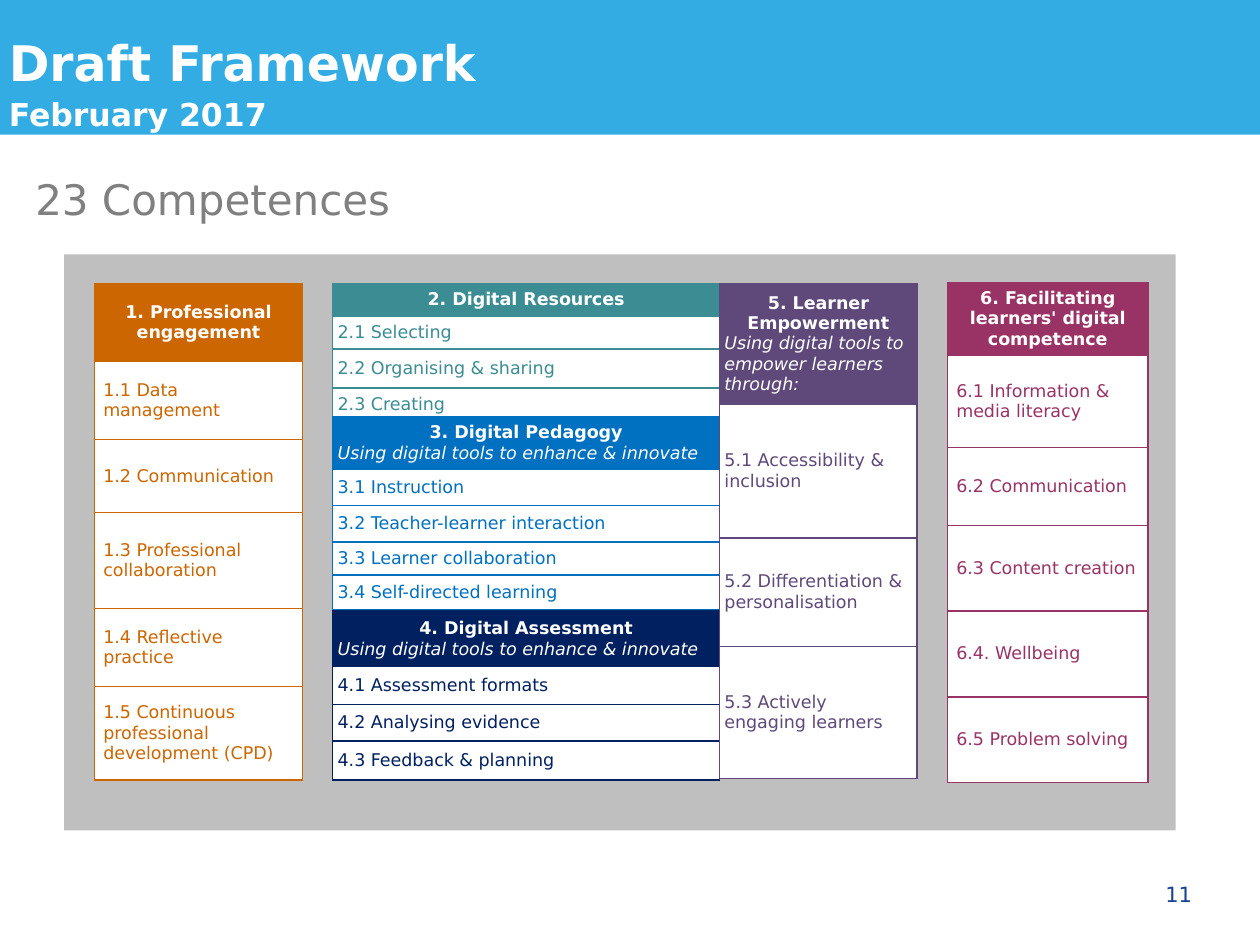
import pptx
import pptx.util
import pptx.dml.color
import pptx.enum.shapes
import pptx.enum.text
import pptx.oxml.ns
import lxml.etree

Inches = pptx.util.Inches
Pt = pptx.util.Pt
Align = pptx.enum.text.PP_ALIGN
Anchor = pptx.enum.text.MSO_ANCHOR

COLORS = {
    "banner": "33ACE3",
    "panel": "BFBFBF",
    "white": "FFFFFF",
    "heading": "808080",
    "page": "164194",
    "resources": "3C8C93",
    "pedagogy": "0070C0",
    "assessment": "002060",
    "facilitating": "993366",
    "engagement": "CC6600",
    "empowerment": "5F497A",
}

INNOVATE = "Using digital tools to enhance & innovate"

AREAS = [
    ("resources", 2.64, 2.25, 3.07, [0.26, 0.26, 0.31, 0.27],
     ["2. Digital Resources"], (0.04, 0.04), (0.04, 0.04),
     ["2.1 Selecting", "2.2 Organising & sharing", "2.3 Creating"]),
    ("pedagogy", 2.64, 3.31, 3.07, [0.39, 0.29, 0.29, 0.26, 0.28],
     ["3. Digital Pedagogy", INNOVATE], (0.04, 0.04), (0.04, 0.04),
     ["3.1 Instruction", "3.2 Teacher-learner interaction",
      "3.3 Learner collaboration", "3.4 Self-directed learning"]),
    ("assessment", 2.64, 4.85, 3.07, [0.44, 0.3, 0.29, 0.31],
     ["4. Digital Assessment", INNOVATE], (0.04, 0.04), (0.04, 0.04),
     ["4.1 Assessment formats", "4.2 Analysing evidence",
      "4.3 Feedback & planning"]),
    ("facilitating", 7.52, 2.24, 1.59, [0.55, 0.73, 0.62, 0.68, 0.68, 0.68],
     ["6. Facilitating learners' digital competence"], (0.07, 0.04), (0.07, 0.04),
     ["6.1 Information & media literacy", "6.2 Communication",
      "6.3 Content creation", "6.4. Wellbeing", "6.5 Problem solving"]),
    ("engagement", 0.75, 2.25, 1.65, [0.62, 0.62, 0.58, 0.76, 0.62, 0.74],
     ["1. Professional engagement"], (0.04, 0.04), (0.07, 0),
     ["1.1 Data management", "1.2 Communication",
      "1.3 Professional collaboration", "1.4 Reflective practice",
      "1.5 Continuous professional development (CPD)"]),
    ("empowerment", 5.71, 2.25, 1.57, [0.96, 1.06, 0.86, 1.05],
     ["5. Learner Empowerment", "Using digital tools to empower learners through:"],
     (0.04, 0.04), (0.04, 0.04),
     ["5.1 Accessibility & inclusion", "5.2 Differentiation & personalisation",
      "5.3 Actively engaging learners"]),
]


class SlideBuilder:
    font_name = "DejaVu Sans"
    cell_size = 10
    border_width = 1

    def __init__(self, slide):
        self.slide = slide

    def color(self, key):
        return pptx.dml.color.RGBColor.from_string(COLORS[key])

    def style(self, font, size, color, bold=False, italic=False):
        font.name = self.font_name
        font.size = Pt(size)
        font.bold = bold
        font.italic = italic
        font.color.rgb = self.color(color)

    def block(self, left, top, width, height, color):
        shape = self.slide.shapes.add_shape(
            pptx.enum.shapes.MSO_SHAPE.RECTANGLE,
            Inches(left), Inches(top), Inches(width), Inches(height))
        shape.shadow.inherit = False
        shape.fill.solid()
        shape.fill.fore_color.rgb = self.color(color)
        shape.line.fill.background()

    def text(self, left, top, width, height, lines, color, bold=False,
             align=Align.LEFT, anchor=Anchor.TOP, inset=0, spacing=1.1):
        box = self.slide.shapes.add_textbox(
            Inches(left), Inches(top), Inches(width), Inches(height))
        frame = box.text_frame
        frame.word_wrap = True
        frame.vertical_anchor = anchor
        frame.margin_left = frame.margin_right = Inches(inset)
        frame.margin_top = frame.margin_bottom = 0
        paragraph = frame.paragraphs[0]
        paragraph.alignment = align
        paragraph.line_spacing = spacing
        for index, (words, size) in enumerate(lines):
            if index:
                paragraph.add_line_break()
            run = paragraph.add_run()
            run.text = words
            self.style(run.font, size, color, bold)

    def border(self, cell, color):
        properties = cell._tc.get_or_add_tcPr()
        qn = pptx.oxml.ns.qn
        for side in ("a:lnL", "a:lnR", "a:lnT", "a:lnB"):
            line = lxml.etree.SubElement(
                properties, qn(side), w=str(Pt(self.border_width)))
            fill = lxml.etree.SubElement(line, qn("a:solidFill"))
            lxml.etree.SubElement(fill, qn("a:srgbClr"), val=COLORS[color])

    def cell(self, cell, lines, fill, border, inset):
        self.border(cell, border)
        cell.fill.solid()
        cell.fill.fore_color.rgb = self.color(fill)
        cell.vertical_anchor = Anchor.MIDDLE
        side, end = inset
        cell.margin_left = cell.margin_right = Inches(side)
        cell.margin_top = cell.margin_bottom = Inches(end)
        cell.text = "\n".join(lines)
        return cell.text_frame.paragraphs

    def area(self, color, left, top, width, heights, header,
             header_inset, body_inset, competences):
        table = self.slide.shapes.add_table(
            len(heights), 1, Inches(left), Inches(top),
            Inches(width), Inches(sum(heights))).table
        table.columns[0].width = Inches(width)
        for row, height in zip(table.rows, heights):
            row.height = Inches(height)
        title, *subtitles = self.cell(
            table.cell(0, 0), header, color, color, header_inset)
        title.alignment = Align.CENTER
        self.style(title.font, self.cell_size, "white", bold=True)
        for subtitle in subtitles:
            self.style(subtitle.font, self.cell_size, "white", italic=True)
        for row, competence in enumerate(competences, start=1):
            label, = self.cell(
                table.cell(row, 0), [competence], "white", color, body_inset)
            self.style(label.font, self.cell_size, color)


def main():
    deck = pptx.Presentation()
    deck.slide_width = Inches(10)
    deck.slide_height = Inches(7.5)
    builder = SlideBuilder(deck.slides.add_slide(deck.slide_layouts[6]))

    builder.block(0, 0, 10, 1.07, "banner")
    builder.text(7.23, 6.9, 2.33, 0.4, [("11", 12)], "page",
                 align=Align.RIGHT, anchor=Anchor.MIDDLE, inset=0.1, spacing=1.0)
    builder.text(0.07, 0.21, 8.98, 0.71,
                 [("Draft Framework", 28), ("February 2017", 18)],
                 "white", bold=True)
    builder.block(0.51, 2.02, 8.82, 4.57, "panel")
    for area in AREAS:
        builder.area(*area)
    builder.text(0.28, 1.34, 3.39, 0.44, [("23 Competences", 24)], "heading")

    deck.save("out.pptx")


if __name__ == "__main__":
    main()
